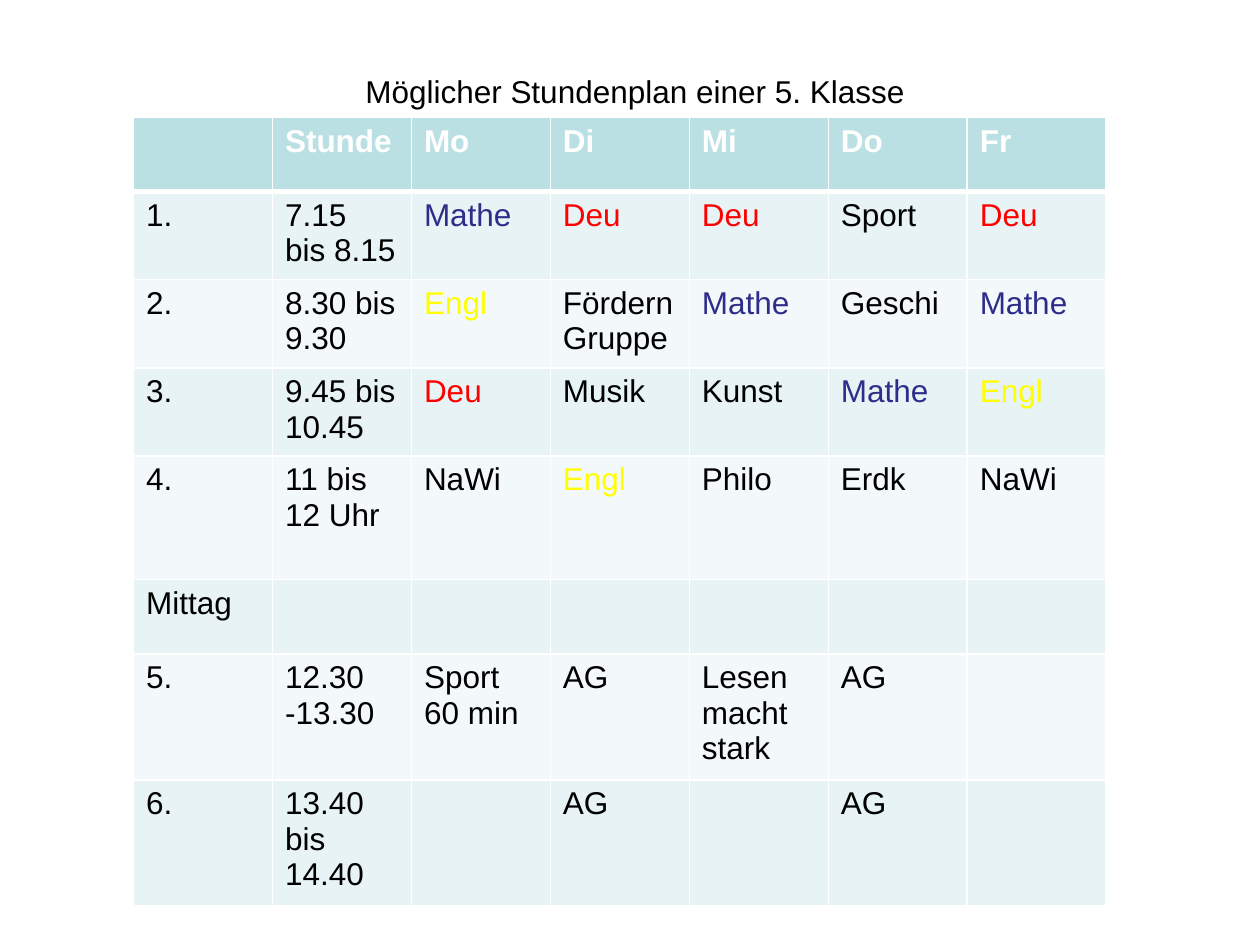
from dataclasses import dataclass

from lxml.etree import SubElement
from pptx import Presentation
from pptx.dml.color import RGBColor
from pptx.enum.text import MSO_ANCHOR, PP_ALIGN
from pptx.oxml.ns import qn
from pptx.util import Inches, Pt


@dataclass(frozen=True)
class Theme:
    font: str = "Arial"
    size: int = 18
    ink: str = "000000"
    white: str = "FFFFFF"
    head: str = "BBE0E3"
    bands: tuple = ("E7F3F4", "F3F9FA")
    thin: int = 1
    thick: int = 3


THEME = Theme()

# Main subjects have their own colour
SUBJECTS = {"Mathe": "2D2D8A", "Deu": "FF0000", "Engl": "FFFF00"}

# \n starts a paragraph, \v breaks a line
PLAN = [
    ["", "Stunde", "Mo", "Di", "Mi", "Do", "Fr"],
    ["1.", "7.15\vbis 8.15", "Mathe", "Deu", "Deu", "Sport", "Deu"],
    ["2.", "8.30 bis 9.30", "Engl", "Fördern\nGruppe", "Mathe", "Geschi", "Mathe"],
    ["3.", "9.45 bis\n10.45", "Deu", "Musik", "Kunst", "Mathe", "Engl"],
    ["4.", "11 bis 12 Uhr", "NaWi", "Engl", "Philo", "Erdk", "NaWi"],
    ["Mittag", "", "", "", "", "", ""],
    ["5.", "12.30 -13.30", "Sport\n60 min", "AG", "Lesen macht stark", "AG", ""],
    ["6.", "13.40 bis\n14.40", "", "AG", "", "AG", ""],
]
HEIGHTS = [0.59, 0.7, 0.7, 0.7, 0.98, 0.59, 1, 1]
WIDTH = 7.72


def style_text(frame, color, bold=False):
    for para in frame.paragraphs:
        for run in para.runs:
            font = run.font
            font.name, font.size, font.bold = THEME.font, Pt(THEME.size), bold
            font.color.rgb = RGBColor.from_string(color)


def add_title(slide, text):
    title = slide.shapes.title
    title.left, title.top = Inches(1.3), Inches(0.52)
    title.width, title.height = Inches(7.48), Inches(0.4)
    frame = title.text_frame
    frame.text = text
    frame.word_wrap = True
    frame.vertical_anchor = MSO_ANCHOR.TOP
    frame.paragraphs[0].alignment = PP_ALIGN.CENTER
    style_text(frame, THEME.ink)


def set_borders(cell, top, bottom):
    props = cell._tc.get_or_add_tcPr()
    sides = {"L": THEME.thin, "R": THEME.thin, "T": top, "B": bottom}
    for side, width in sides.items():
        line = SubElement(props, qn(f"a:ln{side}"), w=str(Pt(width)))
        fill = SubElement(line, qn("a:solidFill"))
        SubElement(fill, qn("a:srgbClr"), val=THEME.white)


def fill_cell(cell, text, row):
    header = row == 0
    cell.text_frame.text = text
    color = THEME.white if header else SUBJECTS.get(text, THEME.ink)
    style_text(cell.text_frame, color, header)
    # Borders come before the fill; a thick rule parts header and body
    set_borders(cell, THEME.thick if row == 1 else THEME.thin,
                THEME.thick if header else THEME.thin)
    shade = THEME.head if header else THEME.bands[(row - 1) % 2]
    cell.fill.solid()
    cell.fill.fore_color.rgb = RGBColor.from_string(shade)


def add_plan(slide):
    count = len(PLAN[0])
    table = slide.shapes.add_table(
        len(PLAN), count, Inches(1.06), Inches(0.93),
        Inches(WIDTH), Inches(sum(HEIGHTS))).table
    for col in table.columns:
        col.width = Inches(WIDTH / count)
    for row, (height, texts) in enumerate(zip(HEIGHTS, PLAN)):
        table.rows[row].height = Inches(height)
        for col, text in enumerate(texts):
            fill_cell(table.cell(row, col), text, row)


def main():
    deck = Presentation()
    deck.slide_width, deck.slide_height = Inches(10), Inches(7.5)
    slide = deck.slides.add_slide(deck.slide_layouts[5])

    # Heading
    add_title(slide, "Möglicher Stundenplan einer 5. Klasse")
    # Timetable
    add_plan(slide)

    deck.save("out.pptx")


if __name__ == "__main__":
    main()
